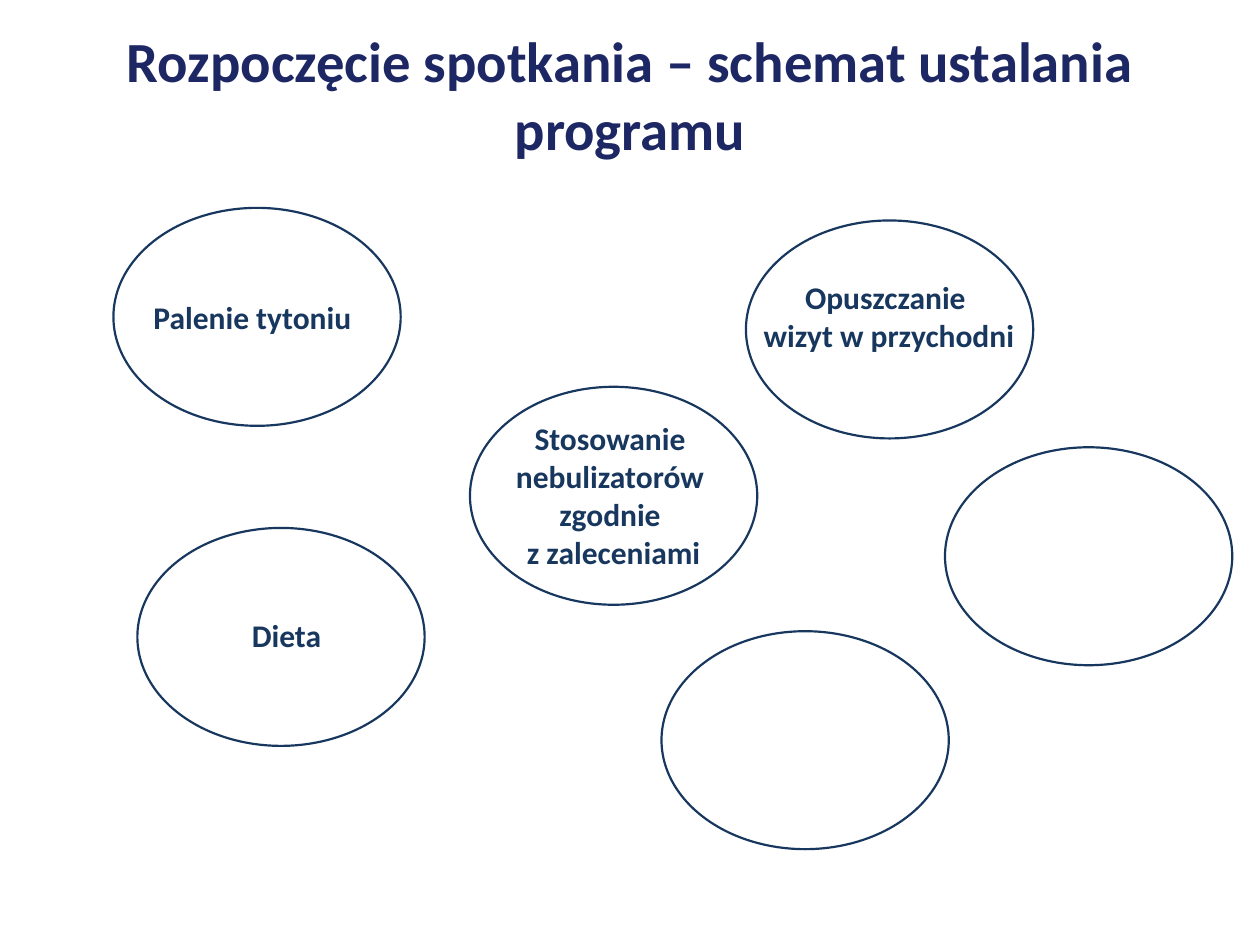
from pptx import Presentation
from pptx.dml.color import RGBColor
from pptx.enum.shapes import MSO_SHAPE
from pptx.enum.text import MSO_ANCHOR, MSO_AUTO_SIZE, PP_ALIGN
from pptx.util import Inches, Pt

OVAL = MSO_SHAPE.OVAL
MIDDLE = MSO_ANCHOR.MIDDLE
FIT = MSO_AUTO_SIZE.SHAPE_TO_FIT_TEXT
NONE = MSO_AUTO_SIZE.NONE
LEFT, CENTER = PP_ALIGN.LEFT, PP_ALIGN.CENTER
WIDTH, HEIGHT = Inches(10), Inches(7.5)
COLS, ROWS = 100, 75
OVAL_W, OVAL_H = 22.8, 17.3
NAVY, BLUE = "1D2763", "17375E"

TOPICS = [
    ((9, 16.5), ["Palenie tytoniu"], (2.2, 6.7, 17.7, 4), LEFT),
    ((59.2, 17.5), ["Opuszczanie ", "wizyt w przychodni"],
     (0.4, 4.1, 21.9, 7), CENTER),
    ((10.9, 41.9), ["Dieta"], (8.1, 6.5, 7.5, 4), LEFT),
    ((37.3, 30.7),
     ["Stosowanie ", "nebulizatorów ", "zgodnie ", "z zaleceniami"],
     (2.6, 2.1, 17.6, 13.1), CENTER),
    ((75, 35.5), [], None, CENTER),
    ((52.5, 50.1), [], None, CENTER),
]


def color(code):
    """Turn a hex string into a colour."""
    return RGBColor.from_string(code)


def place(box):
    """Turn a box in grid columns and rows into slide lengths."""
    x, y, w, h = box
    col, row = WIDTH / COLS, HEIGHT / ROWS
    return int(x * col), int(y * row), int(w * col), int(h * row)


def write(frame, lines, size, code, align):
    """Write one bold paragraph for each line."""
    for i, line in enumerate(lines):
        para = frame.paragraphs[0] if i == 0 else frame.add_paragraph()
        para.alignment = align
        run = para.add_run()
        run.text = line
        font = run.font
        font.name, font.size, font.bold = "Calibri", Pt(size), True
        font.color.rgb = color(code)


def head(slide, box, text):
    """Place and format the slide title."""
    title = slide.shapes.title
    title.left, title.top, title.width, title.height = place(box)
    frame = title.text_frame
    frame.auto_size = NONE
    frame.word_wrap = True
    frame.vertical_anchor = MIDDLE
    write(frame, [text], 32.4, NAVY, CENTER)


def topic(slide, spot, lines, inner, align):
    """Draw an oval at a spot, with its label set relative to it."""
    x, y = spot
    oval = slide.shapes.add_shape(OVAL, *place((x, y, OVAL_W, OVAL_H)))
    oval.shadow.inherit = False
    oval.fill.background()
    oval.line.color.rgb = color(BLUE)
    oval.line.width = Pt(1.25)
    if lines:
        dx, dy, w, h = inner
        label = slide.shapes.add_textbox(*place((x + dx, y + dy, w, h)))
        frame = label.text_frame
        frame.word_wrap = False
        frame.auto_size = FIT
        write(frame, lines, 18, BLUE, align)


def main():
    """Build the slide and save it."""
    deck = Presentation()
    deck.slide_width, deck.slide_height = WIDTH, HEIGHT
    slide = deck.slides.add_slide(deck.slide_layouts[5])
    head(slide, (5, 3.2, 90, 8.5),
         "Rozpoczęcie spotkania – schemat ustalania programu")
    for item in TOPICS:
        topic(slide, *item)
    deck.save("out.pptx")


if __name__ == "__main__":
    main()
